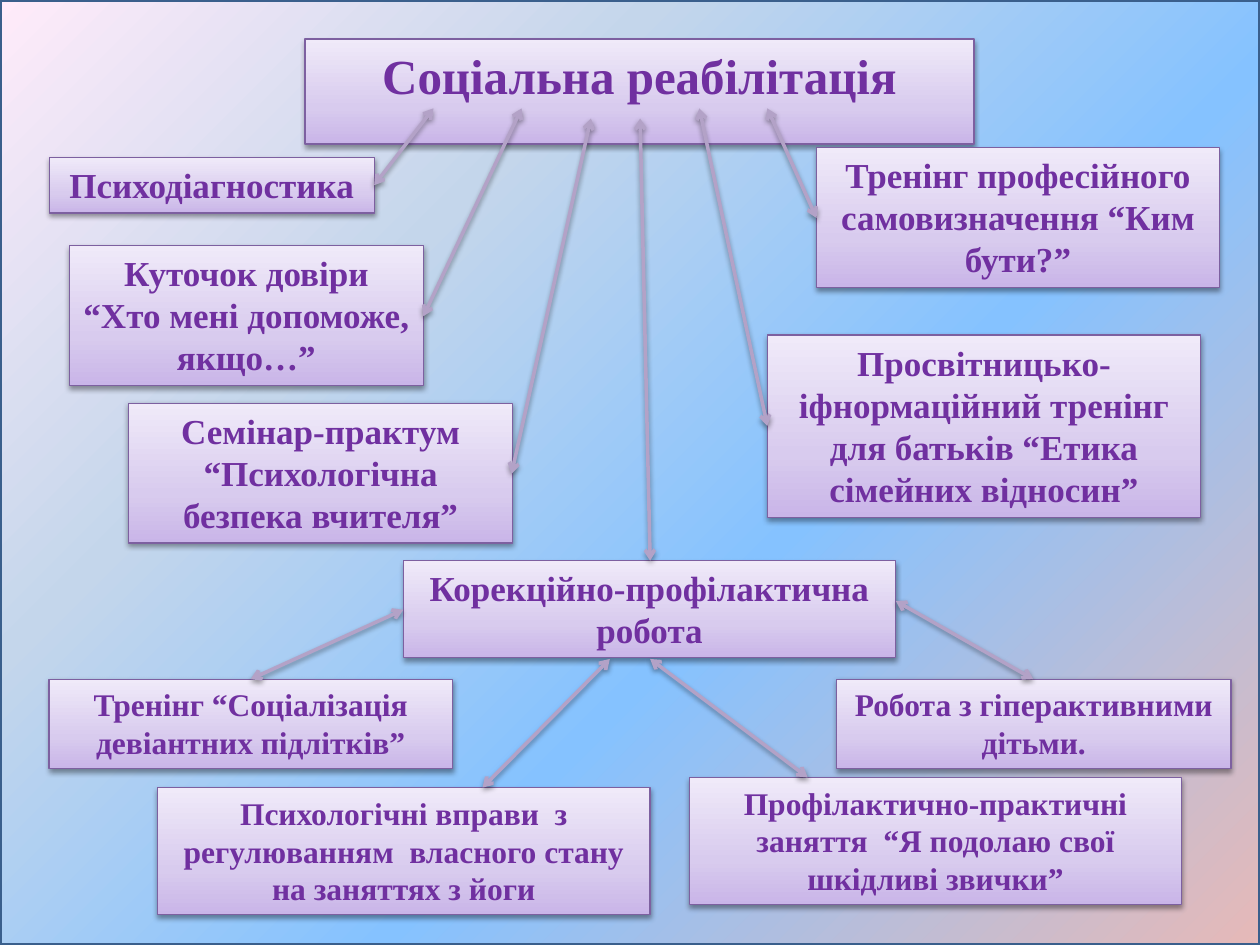
from dataclasses import dataclass

from lxml import etree
from pptx import Presentation
from pptx.dml.color import RGBColor
from pptx.enum.shapes import MSO_CONNECTOR, MSO_SHAPE
from pptx.enum.text import MSO_ANCHOR, MSO_AUTO_SIZE, PP_ALIGN
from pptx.oxml.ns import qn
from pptx.util import Inches, Pt

RECTANGLE = MSO_SHAPE.RECTANGLE
STRAIGHT = MSO_CONNECTOR.STRAIGHT
CENTER = PP_ALIGN.CENTER
TOP = MSO_ANCHOR.TOP
GROW = MSO_AUTO_SIZE.SHAPE_TO_FIT_TEXT

FONT = "Times New Roman"
TEXT_COLOR = "7030A0"
BORDER_COLOR = "7D60A0"
ARROW_COLOR = "B3A2C7"
BOX_STOPS = [(0, "C9B5E8"), (35, "D8CBEE"), (100, "F0EAF9")]
BACKDROP_STOPS = [(0, "254061"), (0, "E6B9B8"), (40, "85C2FF"), (70, "C4D6EB"), (100, "FFEBFA")]


@dataclass(frozen=True)
class Box:
    text: str
    left: float
    top: float
    width: float
    height: float
    size: int = 20


@dataclass(frozen=True)
class Arrow:
    x1: float
    y1: float
    x2: float
    y2: float


HEADING = Box("Соціальна реабілітація", 2.42, 0.31, 5.31, 0.57, 28)

BOXES = [
    Box("Корекційно-профілактична робота", 3.2, 4.45, 3.91, 0.77),
    Box("Психодіагностика", 0.39, 1.25, 2.58, 0.44),
    Box("Куточок довіри\n“Хто мені допоможе, якщо…”", 0.55, 1.95, 2.81, 1.11),
    Box("Семінар-практум\n“Психологічна безпека вчителя”", 1.02, 3.2, 3.05, 1.11),
    Box("Просвітницько-іфнормаційний тренінг для батьків “Етика сімейних відносин”",
        6.09, 2.66, 3.44, 1.45),
    Box("Тренінг професійного самовизначення “Ким бути?”", 6.48, 1.17, 3.2, 1.11),
    Box("Тренінг “Соціалізація девіантних підлітків”", 0.39, 5.39, 3.2, 0.71, 18),
    Box("Психологічні вправи  з регулюванням  власного стану на заняттях з йоги",
        1.25, 6.25, 3.91, 1.01, 18),
    Box("Робота з гіперактивними дітьми.", 6.64, 5.39, 3.13, 0.71, 18),
    Box("Профілактично-практичні заняття  “Я подолаю свої шкідливі звички”",
        5.47, 6.17, 3.91, 1.01, 18),
]

ARROWS = [
    Arrow(5.08, 0.94, 5.16, 4.45),
    Arrow(4.69, 0.94, 4.06, 3.76),
    Arrow(4.14, 0.86, 3.36, 2.51),
    Arrow(3.44, 0.86, 2.97, 1.47),
    Arrow(6.48, 1.73, 6.09, 0.86),
    Arrow(6.09, 3.38, 5.55, 0.86),
    Arrow(8.2, 5.39, 7.11, 4.77),
    Arrow(6.41, 6.17, 5.16, 5.23),
    Arrow(3.83, 6.25, 4.84, 5.23),
    Arrow(1.99, 5.39, 3.2, 4.84),
]


def rgb(value: str) -> RGBColor:
    return RGBColor.from_string(value)


def add_node(parent, tag: str, **attributes):
    return etree.SubElement(parent, qn(tag), {k: str(v) for k, v in attributes.items()})


def set_gradient(shape, stops: list[tuple[int, str]]):
    gradient = add_node(shape._element.spPr, "a:gradFill", rotWithShape=1)
    stop_list = add_node(gradient, "a:gsLst")
    for position, color in stops:
        stop = add_node(stop_list, "a:gs", pos=position * 1000)
        add_node(stop, "a:srgbClr", val=color)
    return gradient


def set_line(shape, color: str, width: float) -> None:
    shape.line.color.rgb = rgb(color)
    shape.line.width = Pt(width)


def add_shadow(shape) -> None:
    effects = add_node(shape._element.spPr, "a:effectLst")
    shadow = add_node(effects, "a:outerShdw", blurRad=Pt(3.1), dist=Pt(1.6),
                      dir=90 * 60000, rotWithShape=0)
    black = add_node(shadow, "a:srgbClr", val="000000")
    add_node(black, "a:alpha", val=38000)


def write_text(shape, text: str, *, size: int, color: str = TEXT_COLOR,
               font: str = FONT, bold: bool = True) -> None:
    frame = shape.text_frame
    frame.text = text
    frame.word_wrap = True
    frame.vertical_anchor = TOP
    frame.auto_size = GROW
    for paragraph in frame.paragraphs:
        paragraph.alignment = CENTER
        for run in paragraph.runs:
            run.font.size = Pt(size)
            run.font.name = font
            run.font.bold = bold
            run.font.color.rgb = rgb(color)


def format_box(shape, box: Box) -> None:
    shape.left, shape.top = Inches(box.left), Inches(box.top)
    shape.width, shape.height = Inches(box.width), Inches(box.height)
    gradient = set_gradient(shape, BOX_STOPS)
    add_node(gradient, "a:lin", ang=270 * 60000, scaled=1)
    set_line(shape, BORDER_COLOR, 0.75)
    add_shadow(shape)
    write_text(shape, box.text, size=box.size)


def draw_backdrop(slide, width: int, height: int) -> None:
    backdrop = slide.shapes.add_shape(RECTANGLE, 0, 0, width, height)
    gradient = set_gradient(backdrop, BACKDROP_STOPS)
    circle = add_node(gradient, "a:path", path="circle")
    add_node(circle, "a:fillToRect", l=100000, t=100000)
    set_line(backdrop, "3A5F8C", 2)
    backdrop.shadow.inherit = False


def draw_heading(slide, box: Box) -> None:
    heading = slide.shapes.title
    slide.shapes._spTree.append(heading._element)
    format_box(heading, box)


def draw_box(slide, box: Box) -> None:
    shape = slide.shapes.add_shape(RECTANGLE, 0, 0, Inches(box.width), Inches(box.height))
    format_box(shape, box)


def draw_arrow(slide, arrow: Arrow) -> None:
    connector = slide.shapes.add_connector(
        STRAIGHT, Inches(arrow.x1), Inches(arrow.y1), Inches(arrow.x2), Inches(arrow.y2))
    set_line(connector, ARROW_COLOR, 2)
    line = connector.line._get_or_add_ln()
    for end in ("a:headEnd", "a:tailEnd"):
        add_node(line, end, type="arrow")
    add_shadow(connector)


def main() -> None:
    presentation = Presentation()
    presentation.slide_width = Inches(10)
    presentation.slide_height = Inches(7.5)
    slide = presentation.slides.add_slide(presentation.slide_layouts.get_by_name("Title Only"))
    draw_backdrop(slide, presentation.slide_width, presentation.slide_height)
    draw_heading(slide, HEADING)
    for box in BOXES:
        draw_box(slide, box)
    for arrow in ARROWS:
        draw_arrow(slide, arrow)
    presentation.save("out.pptx")


if __name__ == "__main__":
    main()
